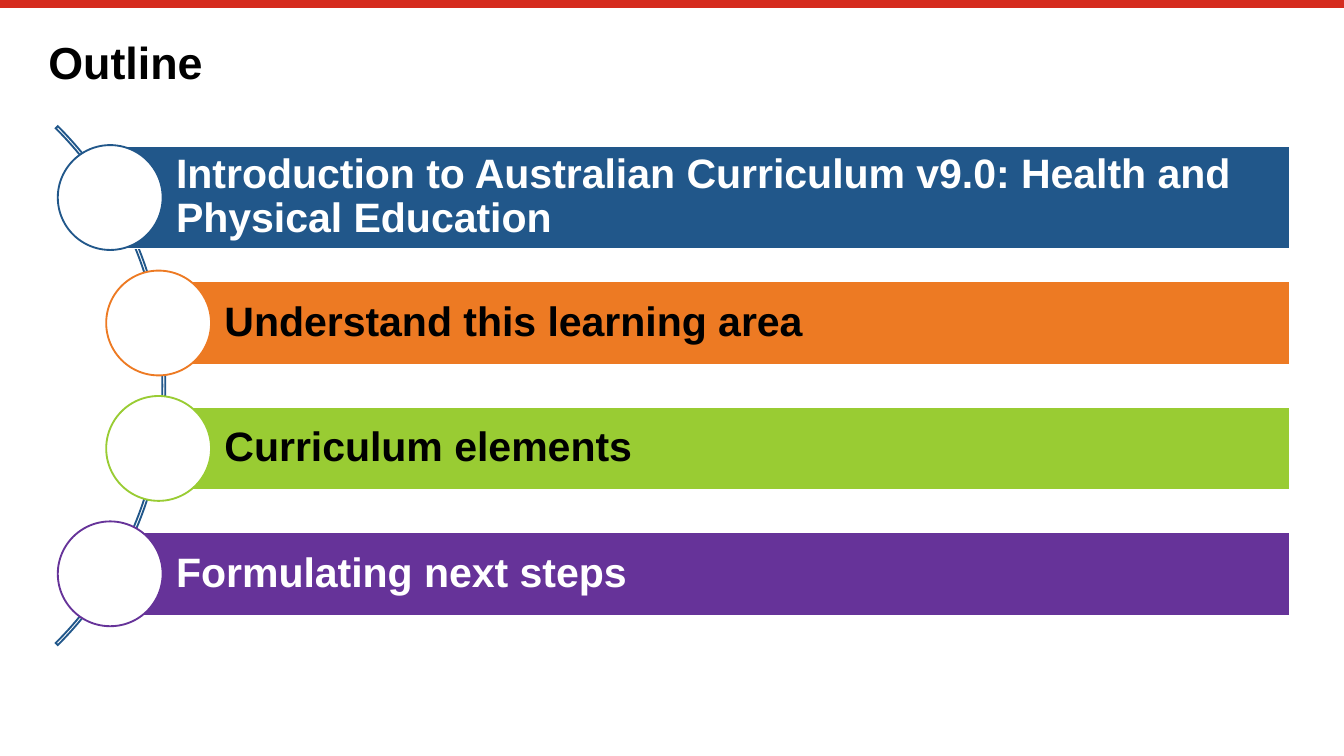
from pptx import Presentation
from pptx.dml.color import RGBColor
from pptx.enum.shapes import MSO_CONNECTOR, MSO_SHAPE
from pptx.enum.text import MSO_ANCHOR, PP_ALIGN
from pptx.oxml.ns import qn
from pptx.util import Inches, Pt
from lxml import etree

STRAIGHT = MSO_CONNECTOR.STRAIGHT
RECT, OVAL, ARC = MSO_SHAPE.RECTANGLE, MSO_SHAPE.OVAL, MSO_SHAPE.BLOCK_ARC
TOP, MIDDLE, LEFT = MSO_ANCHOR.TOP, MSO_ANCHOR.MIDDLE, PP_ALIGN.LEFT
BLUE, WHITE, BLACK = "21578A", "FFFFFF", "000000"


def add_shape(kind, x, y, w, h, fill, line):
    sp = s.shapes.add_shape(kind, Inches(x), Inches(y), Inches(w), Inches(h))
    sp.shadow.inherit = False
    if fill:
        sp.fill.solid()
        sp.fill.fore_color.rgb = RGBColor.from_string(fill)
    else:
        sp.fill.background()
    sp.line.color.rgb = RGBColor.from_string(line)
    sp.line.width = Pt(1)
    # Sharp corners
    etree.SubElement(sp._element.spPr.find(qn("a:ln")), qn("a:miter"), lim="800000")
    return sp


def write(sp, text, size, color, anchor, left=0, margin=0):
    tf = sp.text_frame
    tf.word_wrap = True
    tf.vertical_anchor = anchor
    tf.margin_left = Inches(left)
    tf.margin_top = tf.margin_right = tf.margin_bottom = Inches(margin)
    p = tf.paragraphs[0]
    p.alignment = LEFT
    p.line_spacing = 0.9
    r = p.add_run()
    r.text = text
    r.font.name = "Arial"
    r.font.size = Pt(size)
    r.font.bold = True
    r.font.color.rgb = RGBColor.from_string(color)


# 16:9 slide
prs = Presentation()
prs.slide_width = Inches(10)
prs.slide_height = Inches(10 * 9 / 16)
s = prs.slides.add_slide(prs.slide_layouts[6])

# Red rule along the top edge
rule = s.shapes.add_connector(STRAIGHT, 0, Inches(0.03), Inches(10), Inches(0.03))
rule.line.color.rgb = RGBColor.from_string("D52B1E")
rule.line.width = Pt(4.2)
etree.SubElement(rule._element.spPr, qn("a:effectLst"))

# Title
title = s.shapes.add_textbox(Inches(0.36), Inches(0.3), Inches(9.29), Inches(0.39))
write(title, "Outline", 24, BLACK, TOP)

# Arc from 315 to 45 degrees behind the circles
arc = add_shape(ARC, -4.23, 0.14, 5.46, 5.46, None, BLUE)
for i, value in enumerate((189, 27, 0.004)):
    arc.adjustments[i] = value

# Agenda bars, each starting at the centre of its circle
items = [
    ("Introduction to Australian Curriculum v9.0: Health and Physical Education",
     0.82, 0.76, BLUE, WHITE),
    ("Understand this learning area", 1.18, 0.62, "ED7A23", BLACK),
    ("Curriculum elements", 1.18, 0.62, "99CC33", BLACK),
    ("Formulating next steps", 0.82, 0.62, "663399", WHITE),
]
right, diameter = 9.6, 0.78
first, last = 1.47, 4.27
pitch = (last - first) / (len(items) - 1)

for i, (text, x, height, color, text_color) in enumerate(items):
    cy = first + i * pitch
    bar = add_shape(RECT, x, cy - height / 2, right - x, height, color, WHITE)
    write(bar, text, 22, text_color, MIDDLE, 0.49, 0.06)
    add_shape(OVAL, x - diameter / 2, cy - diameter / 2, diameter, diameter, WHITE, color)

prs.save("out.pptx")
